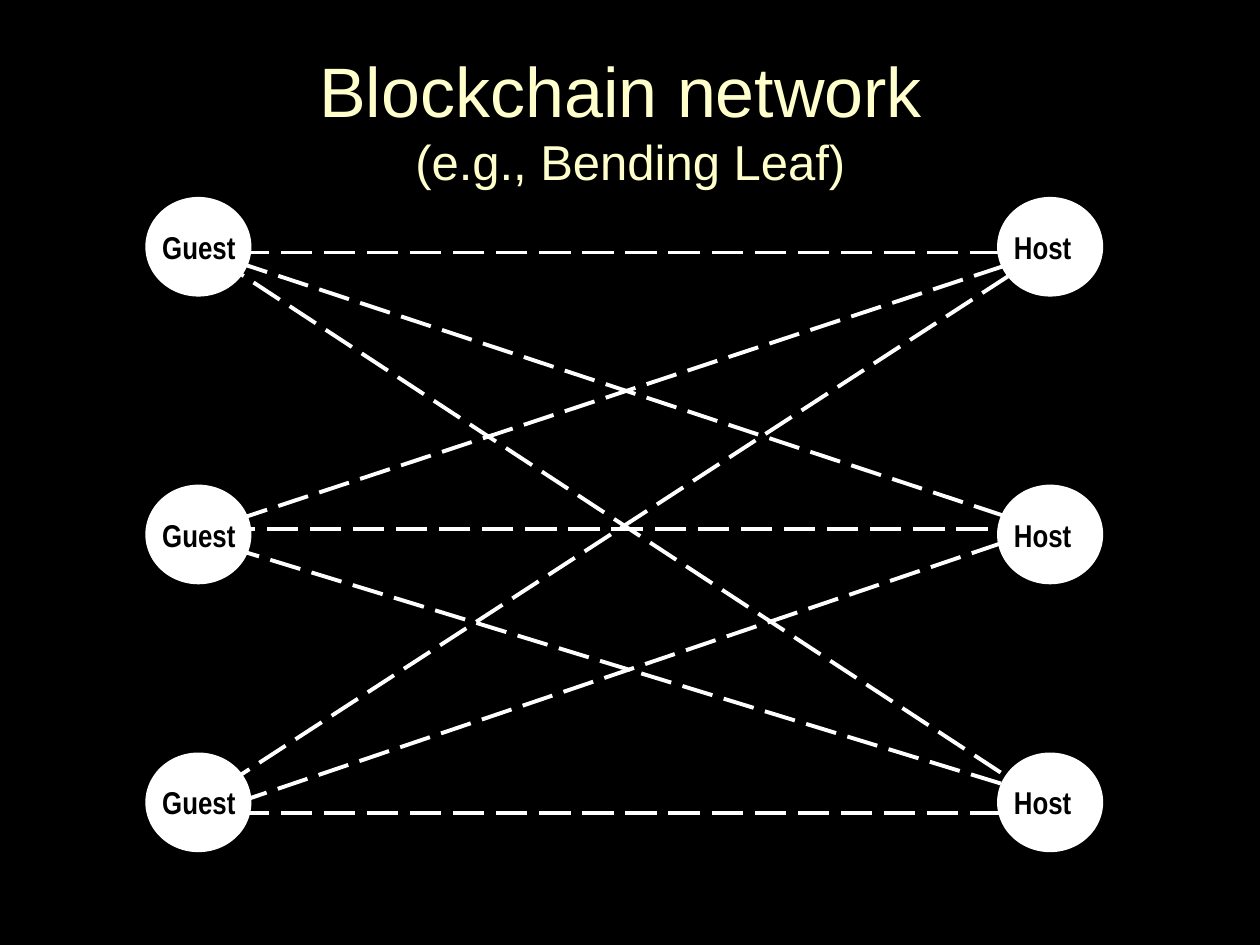
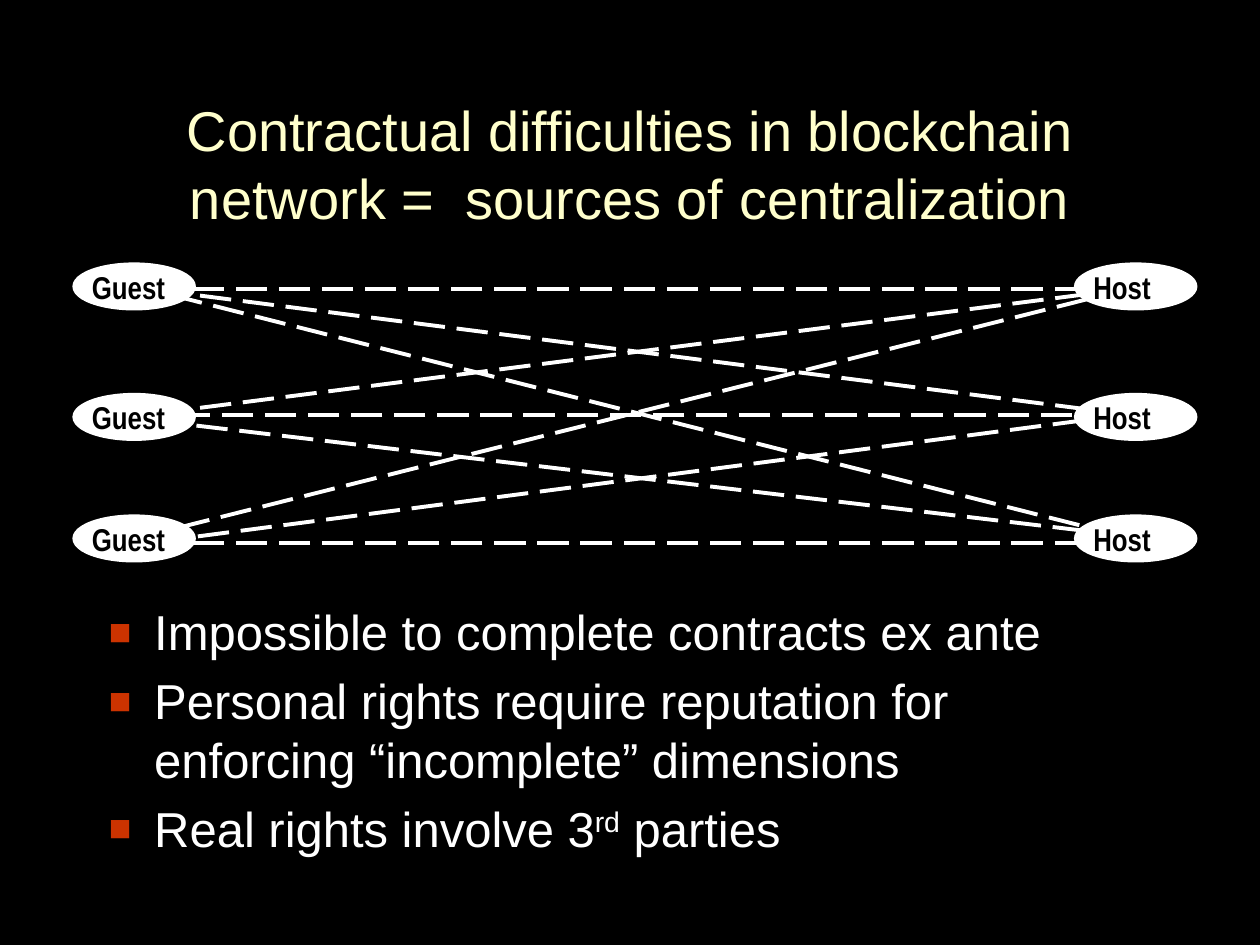
from itertools import product

from lxml import etree
from pptx import Presentation
from pptx.dml.color import RGBColor
from pptx.enum import dml, shapes, text
from pptx.oxml import ns
from pptx.util import Cm, Pt

BLACK, WHITE, CREAM, RUST = "000000", "FFFFFF", "FFFFCC", "CC3300"
MARGIN, CONTENT_WIDTH = 1.91, 21.59
TITLE_HEIGHT = 3.18
PARTIES = ("Guest", "Host")

# Title lines: (wording, size in points)
NETWORK_TITLE = [("Blockchain network ", 40), ("(e.g., Bending Leaf)", 28)]
DIFFICULTIES_TITLE = [
    ("Contractual difficulties in blockchain network =  sources of centralization", 32)]

# Bullets: runs of (wording, is superscript)
DIFFICULTIES = [
    [("Impossible to complete contracts ex ante", False)],
    [("Personal rights require reputation for enforcing “incomplete” dimensions", False)],
    [("Real rights involve 3", False), ("rd", True), (" parties", False)],
]

# Links: (guest level, host level, how far the line stops short on the host side)
LINKS = [
    ("top", "top", 0), ("top", "middle", 0), ("top", "above bottom", 0.16),
    ("middle", "top", 0), ("middle", "middle", 0.28),
    ("below middle", "above bottom", 0.05),
    ("above bottom", "top", 0), ("bottom", "middle", 0.05), ("bottom", "bottom", 0),
]

# Lengths in cm; "columns" and "ends" hold guest side, then host side
TALL_NETWORK = dict(
    columns=(2.97, 20.14), rows=(4.01, 9.81, 15.21), node=(2.06, 1.93),
    ends=(4.19, 21.06),
    levels={"top": 5.09, "middle": 10.67, "below middle": 10.9,
            "above bottom": 16.05, "bottom": 16.38})
FLAT_NETWORK = dict(
    columns=(1.5, 21.69), rows=(5.33, 7.96, 10.41), node=(2.41, 0.89),
    ends=(2.95, 22.76),
    levels={"top": 5.82, "middle": 8.36, "below middle": 8.46,
            "above bottom": 10.8, "bottom": 10.95})


def color(hex_code):
    return RGBColor.from_string(hex_code)


def add_run(paragraph, wording, size, hex_code, font="Arial", bold=False):
    run = paragraph.add_run()
    run.text = wording
    run.font.name, run.font.size, run.font.bold = font, Pt(size), bold
    run.font.color.rgb = color(hex_code)
    return run


def add_frame(slide, top, height):
    """Add a wrapping text box as wide as the content area."""
    box = slide.shapes.add_textbox(Cm(MARGIN), Cm(top), Cm(CONTENT_WIDTH), Cm(height))
    box.text_frame.word_wrap = True
    return box.text_frame


def add_title(slide, top, lines):
    frame = add_frame(slide, top, TITLE_HEIGHT)
    frame.vertical_anchor = text.MSO_ANCHOR.MIDDLE
    heading = frame.paragraphs[0]
    heading.alignment = text.PP_ALIGN.CENTER
    for number, (wording, size) in enumerate(lines):
        if number:
            heading.add_line_break()
        add_run(heading, wording, size, CREAM)


def add_bullet_mark(paragraph):
    props = paragraph._p.get_or_add_pPr()
    props.set("marL", str(Cm(0.95)))
    props.set("indent", str(-Cm(0.95)))
    tint = etree.SubElement(props, ns.qn("a:buClr"))
    etree.SubElement(tint, ns.qn("a:srgbClr"), val=RUST)
    etree.SubElement(props, ns.qn("a:buSzPct"), val="150000")
    etree.SubElement(props, ns.qn("a:buFont"), typeface="Arial")
    etree.SubElement(props, ns.qn("a:buChar"), char="▪")


def add_bullets(slide, top, height, items, size=28):
    frame = add_frame(slide, top, height)
    for number, runs in enumerate(items):
        item = frame.add_paragraph() if number else frame.paragraphs[0]
        add_bullet_mark(item)
        if number:
            item.space_before = Pt(size * 0.2)
        for wording, superscript in runs:
            run = add_run(item, wording, size, WHITE)
            if superscript:
                run._r.get_or_add_rPr().set("baseline", "30000")


def add_link(slide, start, end):
    link = slide.shapes.add_connector(
        shapes.MSO_CONNECTOR.STRAIGHT, *map(Cm, start + end))
    link.line.color.rgb = color(WHITE)
    link.line.width = Pt(2.25)
    link.line.dash_style = dml.MSO_LINE.LONG_DASH
    etree.SubElement(link._element.spPr, ns.qn("a:effectLst"))


def add_node(slide, left, top, size, party):
    node = slide.shapes.add_shape(
        shapes.MSO_SHAPE.OVAL, *map(Cm, (left, top) + size))
    node.shadow.inherit = False
    node.fill.solid()
    node.fill.fore_color.rgb = node.line.color.rgb = color(WHITE)
    node.line.width = Pt(2.25)
    frame = node.text_frame
    frame.margin_left = frame.margin_right = frame.margin_top = frame.margin_bottom = 0
    frame.word_wrap = False
    frame.vertical_anchor = text.MSO_ANCHOR.MIDDLE
    label = frame.paragraphs[0]
    label.alignment = text.PP_ALIGN.LEFT
    add_run(label, party, 18, BLACK, "Arial Narrow", bold=True)


def add_network(slide, columns, rows, node, ends, levels):
    """Link every guest with every host, then lay the nodes over the line ends."""
    guest_end, host_end = ends
    for guest_level, host_level, gap in LINKS:
        add_link(slide, (host_end - gap, levels[host_level]),
                 (guest_end, levels[guest_level]))
    for (left, party), top in product(zip(columns, PARTIES), rows):
        add_node(slide, left, top, node, party)


def main():
    deck = Presentation()
    deck.slide_width, deck.slide_height = Cm(25.4), Cm(19.05)
    backdrop = deck.slide_master.background.fill
    backdrop.solid()
    backdrop.fore_color.rgb = color(BLACK)
    blank = deck.slide_layouts[6]

    network = deck.slides.add_slide(blank)
    add_title(network, 0.81, NETWORK_TITLE)
    add_network(network, **TALL_NETWORK)

    difficulties = deck.slides.add_slide(blank)
    add_title(difficulties, 1.7, DIFFICULTIES_TITLE)
    add_bullets(difficulties, 12.01, 5.51, DIFFICULTIES)
    add_network(difficulties, **FLAT_NETWORK)

    deck.save("out.pptx")


if __name__ == "__main__":
    main()
